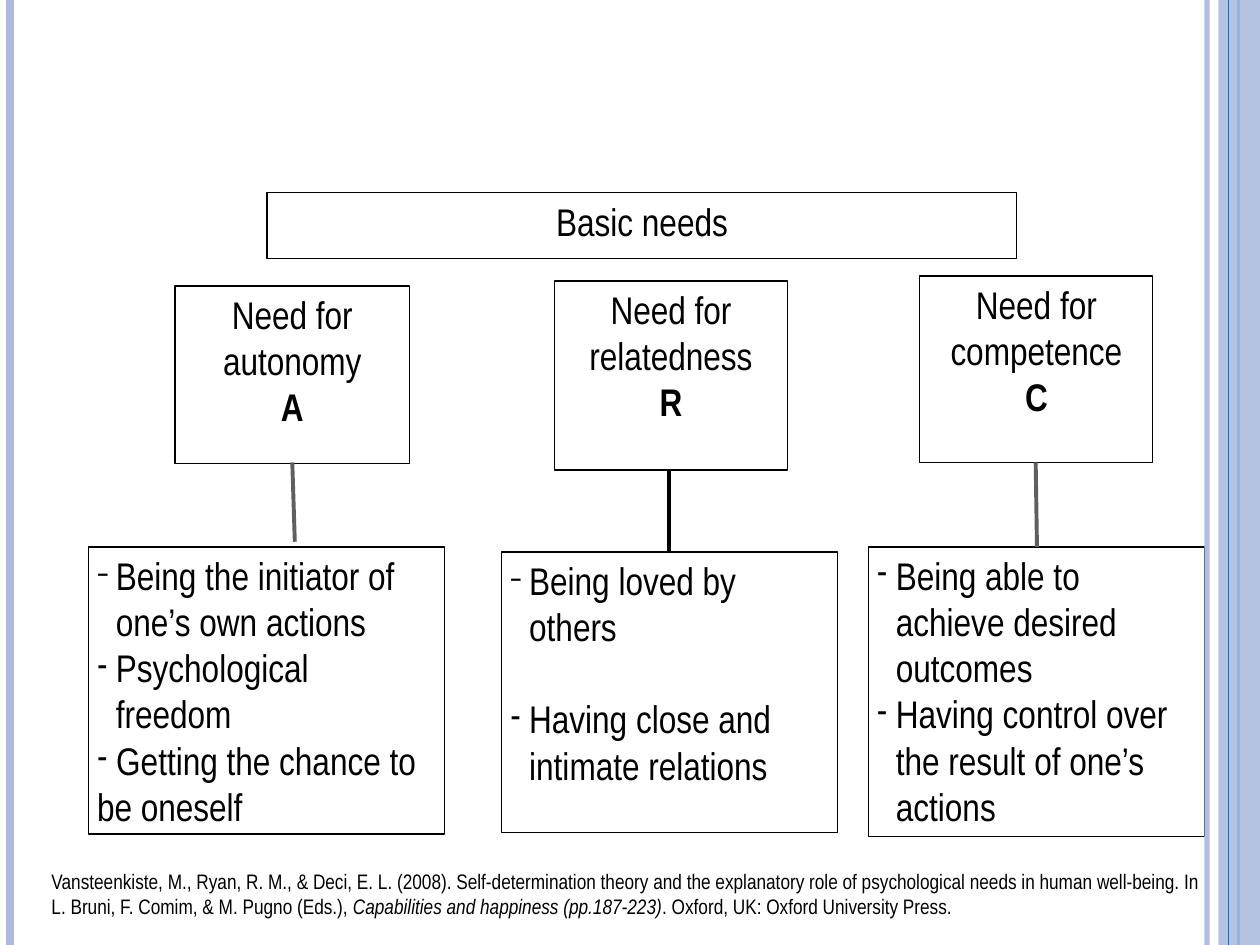
from dataclasses import dataclass
from typing import NamedTuple

from lxml import etree
from pptx import Presentation
from pptx import util as u
from pptx.dml.color import RGBColor
from pptx.enum import shapes, text
from pptx.oxml.ns import qn


@dataclass(frozen=True)
class Theme:
    ink: str = "000000"
    paper: str = "FFFFFF"
    link: str = "5F5F5F"
    rail: str = "ABBBDF"
    accent: str = "0F6FC6"
    font: str = "Arial Narrow"
    dash_font: str = "TeX Gyre Adventor"
    body: float = 22
    note: float = 12
    line_height: float = 26.4
    border: float = 0.75
    link_width: float = 2.25


class Frame(NamedTuple):
    """Left, top, width and height as percentages of the slide."""
    x: float
    y: float
    w: float
    h: float


class Item(NamedTuple):
    lines: tuple[str, ...]
    hang: float = 0.15
    gap: float = 0
    light_dash: bool = False


class Need(NamedTuple):
    name: str
    letter: str
    head: Frame
    detail: Frame
    link: tuple[float, float, float, float]
    link_color: str
    items: tuple[Item, ...]


class Rail(NamedTuple):
    x: float
    color: str
    width: float
    opacity: int = 100


T = Theme()
WIDTH, HEIGHT = u.Inches(10), u.Inches(7.5)
TITLE = Frame(21.2, 20.4, 59.5, 6.93)
NOTE = Frame(3.1, 91.2, 93.8, 6.8)
BAND = Frame(96.7, 0, 3.3, 100)
RAILS_BEHIND = (Rail(95.8, T.rail, 3, 93), Rail(0.8, T.rail, 4.5),
                Rail(98.3, T.accent, 1.5))
RAIL_FRONT = Rail(97.5, T.accent, 0.75)
NEEDS = (
    Need("Need for autonomy", "A", Frame(13.9, 30.27, 18.6, 18.8),
         Frame(7, 57.87, 28.3, 30.4), (23.2, 48.93, 23.4, 57.33), T.link,
         (Item(("Being the initiator of", "one’s own actions"), light_dash=True),
          Item(("Psychological", "freedom")),
          Item((" Getting the chance to be oneself",), hang=0))),
    Need("Need for relatedness", "R", Frame(44, 29.73, 18.5, 20),
         Frame(39.8, 58.4, 26.7, 29.73), (53.1, 49.87, 53.1, 58.4), T.ink,
         (Item(("Being loved by", "others"), light_dash=True),
          Item(("Having close and", "intimate relations"), gap=T.line_height))),
    Need("Need for competence", "C", Frame(73, 29.2, 18.5, 19.73),
         Frame(68.9, 57.87, 26.7, 30.67), (82.2, 48.93, 82.3, 57.87), T.link,
         (Item(("Being able to", "achieve desired", "outcomes")),
          Item(("Having control over", "the result of one’s", "actions")))),
)
CITATION = (
    ("Vansteenkiste, M., Ryan, R. M., & Deci, E. L. (2008). Self-determination "
     "theory and the explanatory role of psychological needs in human well-being. "
     "In L. Bruni, F. Comim, & M. Pugno (Eds.), ", False),
    ("Capabilities and happiness (pp.187-223)", True),
    (". Oxford, UK: Oxford University Press.", False),
)


def across(pct: float) -> int:
    return int(WIDTH * pct / 100)


def down(pct: float) -> int:
    return int(HEIGHT * pct / 100)


def place(sp, f: Frame) -> None:
    sp.left, sp.top = across(f.x), down(f.y)
    sp.width, sp.height = across(f.w), down(f.h)


def set_opacity(element, opacity: int) -> None:
    for color in element.iter(qn("a:srgbClr")):
        etree.SubElement(color, qn("a:alpha"), val=str(opacity * 1000))


def add_run(p, words: str, size: float = T.body, bold: bool = False,
            italic: bool = False) -> None:
    r = p.add_run()
    r.text = words
    r.font.name, r.font.size = T.font, u.Pt(size)
    r.font.bold, r.font.italic = bold, italic
    r.font.color.rgb = RGBColor.from_string(T.ink)


def style_box(sp, f: Frame):
    """Make a bordered white box and return its empty text frame."""
    place(sp, f)
    sp.fill.solid()
    sp.fill.fore_color.rgb = RGBColor.from_string(T.paper)
    sp.line.color.rgb = RGBColor.from_string(T.ink)
    sp.line.width = u.Pt(T.border)
    tf = sp.text_frame
    tf.word_wrap = True
    tf.auto_size = text.MSO_AUTO_SIZE.NONE
    tf.vertical_anchor = text.MSO_ANCHOR.TOP
    tf.margin_left = tf.margin_right = u.Inches(0.07)
    tf.margin_top = tf.margin_bottom = u.Inches(0.04)
    return tf


def add_line(s, x1: float, y1: float, x2: float, y2: float, color: str,
             width: float, opacity: int = 100) -> None:
    line = s.shapes.add_connector(shapes.MSO_CONNECTOR.STRAIGHT, across(x1),
                                  down(y1), across(x2), down(y2))
    line.line.color.rgb = RGBColor.from_string(color)
    line.line.width = u.Pt(width)
    if opacity < 100:
        set_opacity(line.line._ln, opacity)
    etree.SubElement(line._element.spPr, qn("a:effectLst"))


def add_rail(s, rail: Rail) -> None:
    add_line(s, rail.x, 0, rail.x, 100, rail.color, rail.width, rail.opacity)


def add_band(s) -> None:
    sp = s.shapes.add_shape(shapes.MSO_SHAPE.RECTANGLE, 0, 0, 0, 0)
    place(sp, BAND)
    sp.shadow.inherit = False
    sp.fill.solid()
    sp.fill.fore_color.rgb = RGBColor.from_string(T.rail)
    set_opacity(sp._element.spPr, 87)
    sp.line.fill.background()


def add_item(p, item: Item) -> None:
    pPr = p._p.get_or_add_pPr()
    pPr.set("marL", str(u.Inches(item.hang)))
    pPr.set("indent", str(-u.Inches(item.hang)))
    if item.light_dash:
        etree.SubElement(pPr, qn("a:buSzPct"), val="91000")
    etree.SubElement(pPr, qn("a:buFont"),
                     typeface=T.dash_font if item.light_dash else T.font)
    etree.SubElement(pPr, qn("a:buChar"), char="-")
    p.alignment = text.PP_ALIGN.LEFT
    p.space_before = u.Pt(item.gap)
    for i, words in enumerate(item.lines):
        if i:
            p.add_line_break()
        add_run(p, words)


def add_need(s, need: Need, body) -> None:
    head = s.shapes.add_shape(shapes.MSO_SHAPE.RECTANGLE, 0, 0, 0, 0)
    head.shadow.inherit = False
    tf = style_box(head, need.head)
    for i, words in enumerate((need.name, need.letter)):
        p = tf.add_paragraph() if i else tf.paragraphs[0]
        p.alignment = text.PP_ALIGN.CENTER
        add_run(p, words, bold=i == 1)
    tf = style_box(body, need.detail)
    for i, item in enumerate(need.items):
        add_item(tf.add_paragraph() if i else tf.paragraphs[0], item)
    add_line(s, *need.link, need.link_color, T.link_width)


def add_citation(s) -> None:
    sp = s.shapes.add_textbox(0, 0, 0, 0)
    place(sp, NOTE)
    sp.text_frame.word_wrap = True
    for words, italic in CITATION:
        add_run(sp.text_frame.paragraphs[0], words, T.note, italic=italic)


def main() -> None:
    prs = Presentation()
    prs.slide_width, prs.slide_height = WIDTH, HEIGHT
    s = prs.slides.add_slide(prs.slide_layouts.get_by_name("Comparison"))
    *bodies, spare = [ph for ph in s.placeholders if 1 <= ph.placeholder_format.idx <= 4]
    spare._element.getparent().remove(spare._element)
    for rail in RAILS_BEHIND:
        add_rail(s, rail)
    add_band(s)
    add_rail(s, RAIL_FRONT)
    p = style_box(s.shapes.title, TITLE).paragraphs[0]
    p.alignment = text.PP_ALIGN.CENTER
    add_run(p, "Basic needs")
    for need, body in zip(NEEDS, bodies):
        add_need(s, need, body)
    add_citation(s)
    prs.save("out.pptx")


if __name__ == "__main__":
    main()
